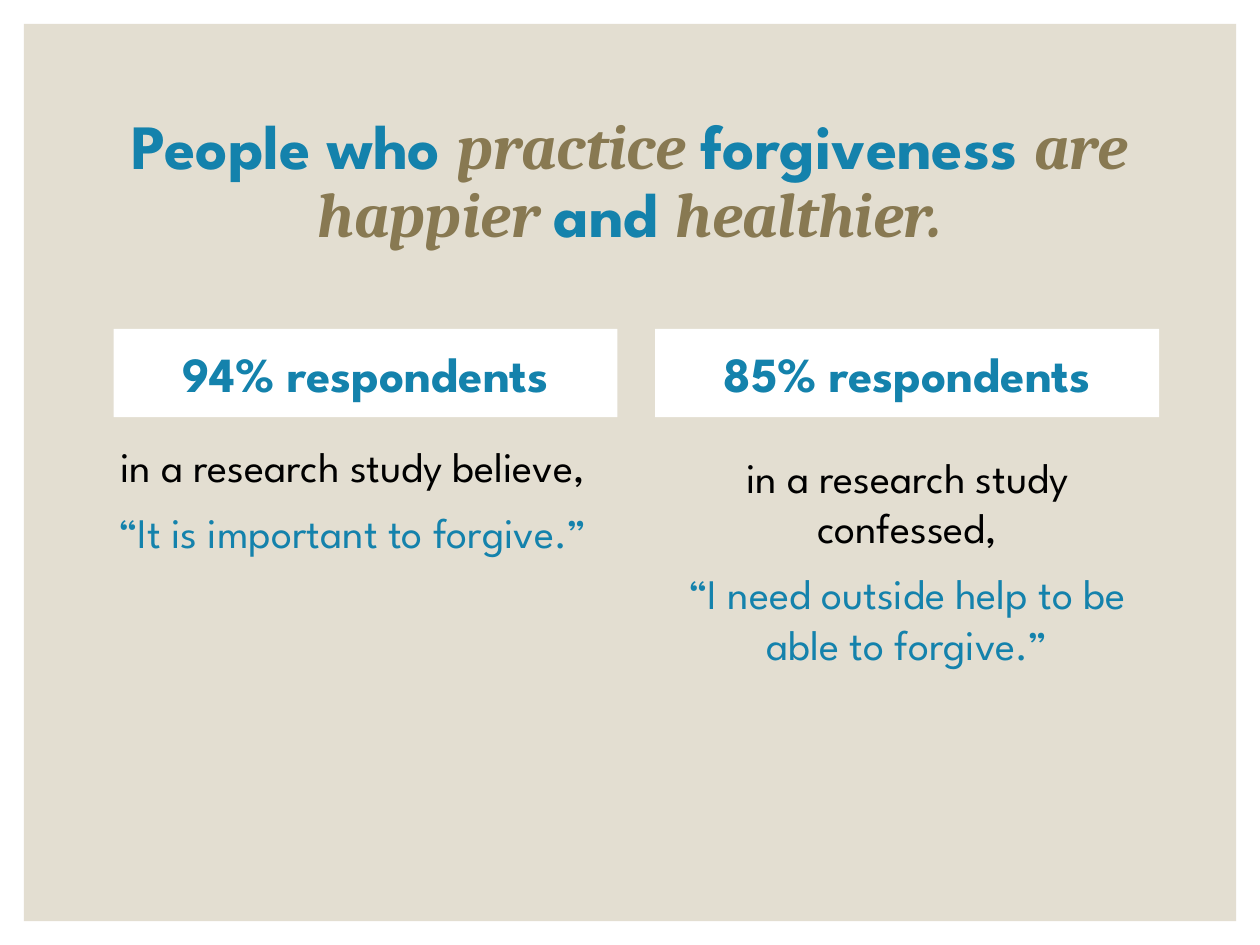
from dataclasses import dataclass

from pptx import Presentation
from pptx.dml.color import RGBColor
from pptx.enum.shapes import MSO_SHAPE
from pptx.enum.text import MSO_ANCHOR, MSO_AUTO_SIZE, PP_ALIGN
from pptx.util import Cm, Pt


@dataclass(frozen=True)
class Theme:
    panel: str = "E3DED1"
    card: str = "FFFFFF"
    blue: str = "1482AC"
    gold: str = "887952"
    black: str = "000000"
    sans: str = "League Spartan"
    serif: str = "Cambria"
    title: int = 36
    head: int = 28
    body: int = 24


THEME = Theme()


def style(font, size, color, face=THEME.sans, bold=False, italic=False):
    font.size, font.name = Pt(size), face
    font.bold, font.italic = bold, italic
    font.color.rgb = RGBColor.from_string(color)


def add_rect(slide, box, color):
    rect = slide.shapes.add_shape(MSO_SHAPE.RECTANGLE, *map(Cm, box))
    rect.shadow.inherit = False
    rect.fill.solid()
    rect.fill.fore_color.rgb = RGBColor.from_string(color)
    rect.line.fill.background()
    return rect


def add_panel(slide, box):
    """Place the backdrop behind everything else."""
    panel = add_rect(slide, box, THEME.panel)
    slide.shapes._spTree.insert(2, panel._element)


def set_title(slide, box, parts):
    """Fill the title with parts that alternate between plain and stressed."""
    title = slide.shapes.title
    title.left, title.top, title.width, title.height = map(Cm, box)
    frame = title.text_frame
    frame.word_wrap = True
    frame.auto_size = MSO_AUTO_SIZE.NONE
    frame.vertical_anchor = MSO_ANCHOR.MIDDLE
    para = frame.paragraphs[0]
    para.alignment, para.line_spacing = PP_ALIGN.CENTER, 0.9
    looks = [(THEME.blue, THEME.sans, False), (THEME.gold, THEME.serif, True)]
    for i, part in enumerate(parts):
        run = para.add_run()
        run.text = part
        color, face, italic = looks[i % 2]
        style(run.font, THEME.title, color, face, True, italic)


def add_head(slide, box, text):
    frame = add_rect(slide, box, THEME.card).text_frame
    frame.word_wrap = True
    frame.vertical_anchor = MSO_ANCHOR.MIDDLE
    para = frame.paragraphs[0]
    para.text, para.alignment = text, PP_ALIGN.CENTER
    style(para.font, THEME.head, THEME.blue, bold=True)


def add_body(slide, box, lead, quote):
    frame = slide.shapes.add_textbox(*map(Cm, box)).text_frame
    frame.word_wrap = True
    lines = [(frame.paragraphs[0], lead, THEME.black),
             (frame.add_paragraph(), quote, THEME.blue)]
    for para, text, color in lines:
        para.text, para.alignment = text, PP_ALIGN.CENTER
        para.space_before = Pt(9)
        style(para.font, THEME.body, color)


def add_column(slide, box, head, lead, quote, shift, drop):
    """Stack a heading card and its text, the text offset by shift and drop."""
    left, top, width, height = box
    add_head(slide, (left, top, width, 1.78), head)
    add_body(slide, (left + shift, top + drop, width, height - drop),
             lead, quote)


def main():
    deck = Presentation()
    deck.slide_width, deck.slide_height = Cm(25.4), Cm(19.05)
    slide = deck.slides.add_slide(deck.slide_layouts[5])
    add_panel(slide, (0.48, 0.48, 24.44, 18.09))
    set_title(slide, (2.03, 1.78, 21.34, 3.81),
              ["People who ", "practice ", "forgiveness ",
               "are happier ", "and ", "healthier."])
    add_column(slide, (2.29, 6.63, 10.16, 11.02), "94% respondents",
               "in a research study believe,",
               "“It is important to forgive.”", -0.26, 2.13)
    add_column(slide, (13.21, 6.63, 10.16, 11.23), "85% respondents",
               "in a research study confessed,",
               "“I need outside help to be able to forgive.”", 0, 2.34)
    deck.save("out.pptx")


if __name__ == "__main__":
    main()
